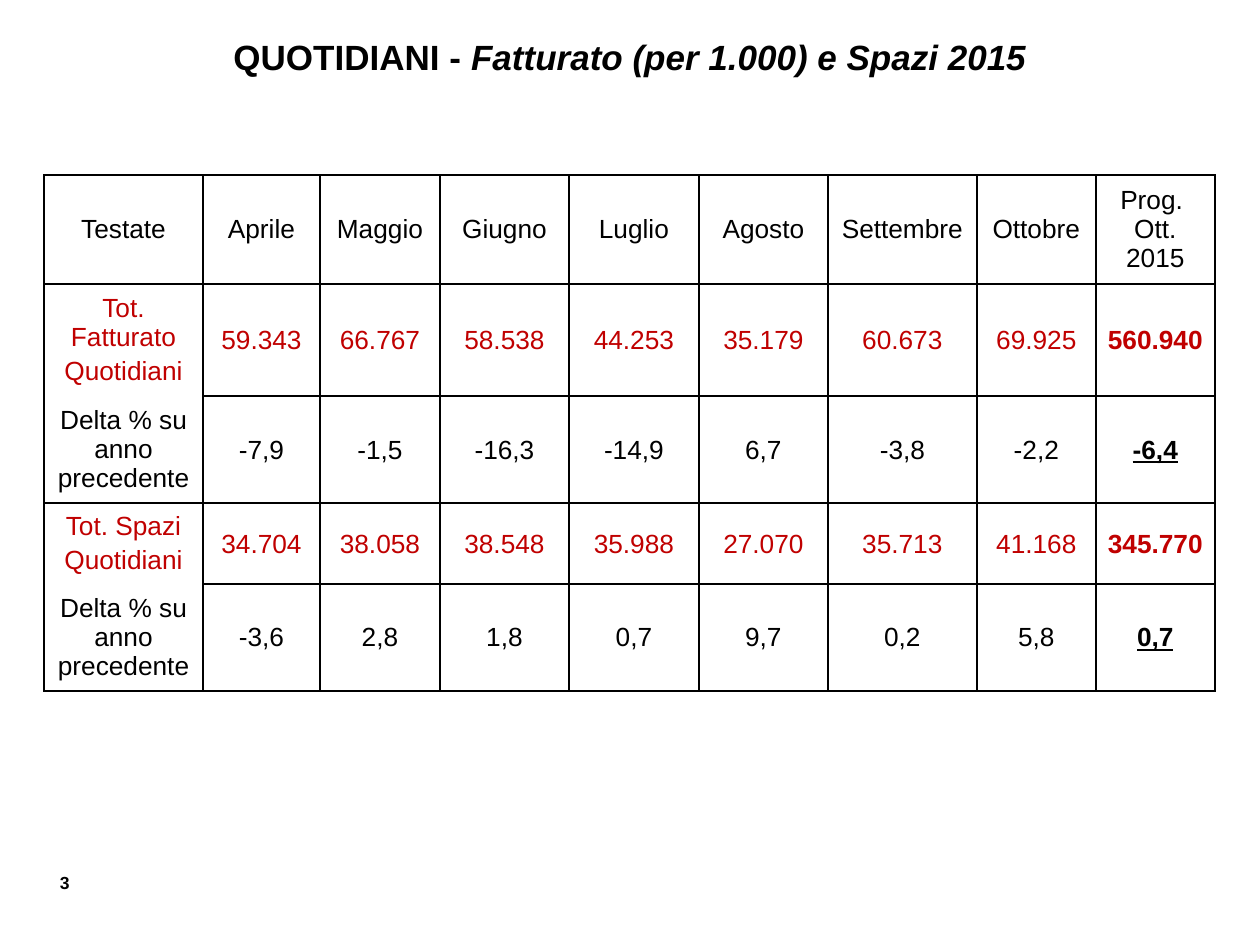
from lxml.etree import SubElement
from pptx import Presentation
from pptx.dml.color import RGBColor
from pptx.enum.text import MSO_ANCHOR, PP_ALIGN
from pptx.oxml.ns import qn
from pptx.util import Pt

PX = 914400 / 126
BLACK = RGBColor(0x00, 0x00, 0x00)
RED = RGBColor(0xC0, 0x00, 0x00)

COLUMN_WIDTHS = [159, 117, 120, 129, 130, 129, 149, 119, 119]
ROW_HEIGHTS = [109, 112, 107, 81, 107]
DELTA = "Delta % su anno precedente"
ROWS = [
    ["Testate", "Aprile", "Maggio", "Giugno", "Luglio", "Agosto",
     "Settembre", "Ottobre", "Prog. \nOtt.\n2015"],
    ["Tot. Fatturato\nQuotidiani", "59.343", "66.767", "58.538", "44.253",
     "35.179", "60.673", "69.925", "560.940"],
    [DELTA, "-7,9", "-1,5", "-16,3", "-14,9", "6,7", "-3,8", "-2,2", "-6,4"],
    ["Tot. Spazi\nQuotidiani", "34.704", "38.058", "38.548", "35.988",
     "27.070", "35.713", "41.168", "345.770"],
    [DELTA, "-3,6", "2,8", "1,8", "0,7", "9,7", "0,2", "5,8", "0,7"],
]


def px(length):
    return round(length * PX)


def set_border(cell, side, visible):
    line = SubElement(cell._tc.get_or_add_tcPr(), qn(f"a:ln{side}"), w=str(Pt(1)))
    if visible:
        fill = SubElement(line, qn("a:solidFill"))
        SubElement(fill, qn("a:srgbClr"), val=str(BLACK))
    else:
        SubElement(line, qn("a:noFill"))


deck = Presentation()
deck.slide_width, deck.slide_height = px(1260), px(945)
page = deck.slides.add_slide(deck.slide_layouts[5])

# Title
title = page.shapes.title
title.left, title.top, title.width, title.height = px(0), px(29), px(1260), px(55)
title.text_frame.vertical_anchor = MSO_ANCHOR.MIDDLE
para = title.text_frame.paragraphs[0]
para.alignment = PP_ALIGN.CENTER
para.font.name, para.font.size, para.font.bold = "Arial", Pt(20), True
para.font.color.rgb = BLACK
para.add_run().text = "QUOTIDIANI - "
span = para.add_run()
span.text = "Fatturato (per 1.000) e Spazi 2015"
span.font.italic = True

# Revenue and space table
table = page.shapes.add_table(
    len(ROWS), len(COLUMN_WIDTHS), px(44), px(175),
    px(sum(COLUMN_WIDTHS)), px(sum(ROW_HEIGHTS))).table
table.first_row = table.horz_banding = False
for column, width in zip(table.columns, COLUMN_WIDTHS):
    column.width = px(width)
for row, height in zip(table.rows, ROW_HEIGHTS):
    row.height = px(height)

for r, texts in enumerate(ROWS):
    is_total = r in (1, 3)
    is_delta = r in (2, 4)
    for c, text in enumerate(texts):
        cell = table.cell(r, c)
        is_label = c == 0
        is_progressive = r > 0 and c == len(texts) - 1

        # Each total label runs into its delta label without a rule between
        hidden_side = {1: "B", 2: "T", 3: "B", 4: "T"}.get(r) if is_label else None
        for side in "LRTB":
            set_border(cell, side, side != hidden_side)
        cell.fill.background()

        cell.vertical_anchor = MSO_ANCHOR.MIDDLE
        if r > 0 and not is_label:
            cell.margin_left = cell.margin_right = cell.margin_top = px(1)
            cell.margin_bottom = 0
        cell.text = text
        for i, para in enumerate(cell.text_frame.paragraphs):
            para.alignment = PP_ALIGN.CENTER
            if is_label and i > 0:
                para.space_before = Pt(3)
            para.font.name, para.font.size = "Arial", Pt(15)
            para.font.bold = is_progressive
            para.font.underline = is_progressive and is_delta
            para.font.color.rgb = RED if is_total else BLACK

# Page number
box = page.shapes.add_textbox(px(24), px(866), px(58), px(34))
box.text_frame.word_wrap = True
para = box.text_frame.paragraphs[0]
para.text = "3"
para.alignment = PP_ALIGN.RIGHT
para.font.name, para.font.size, para.font.bold = "Arial", Pt(10), True
para.font.color.rgb = BLACK

deck.save("out.pptx")
